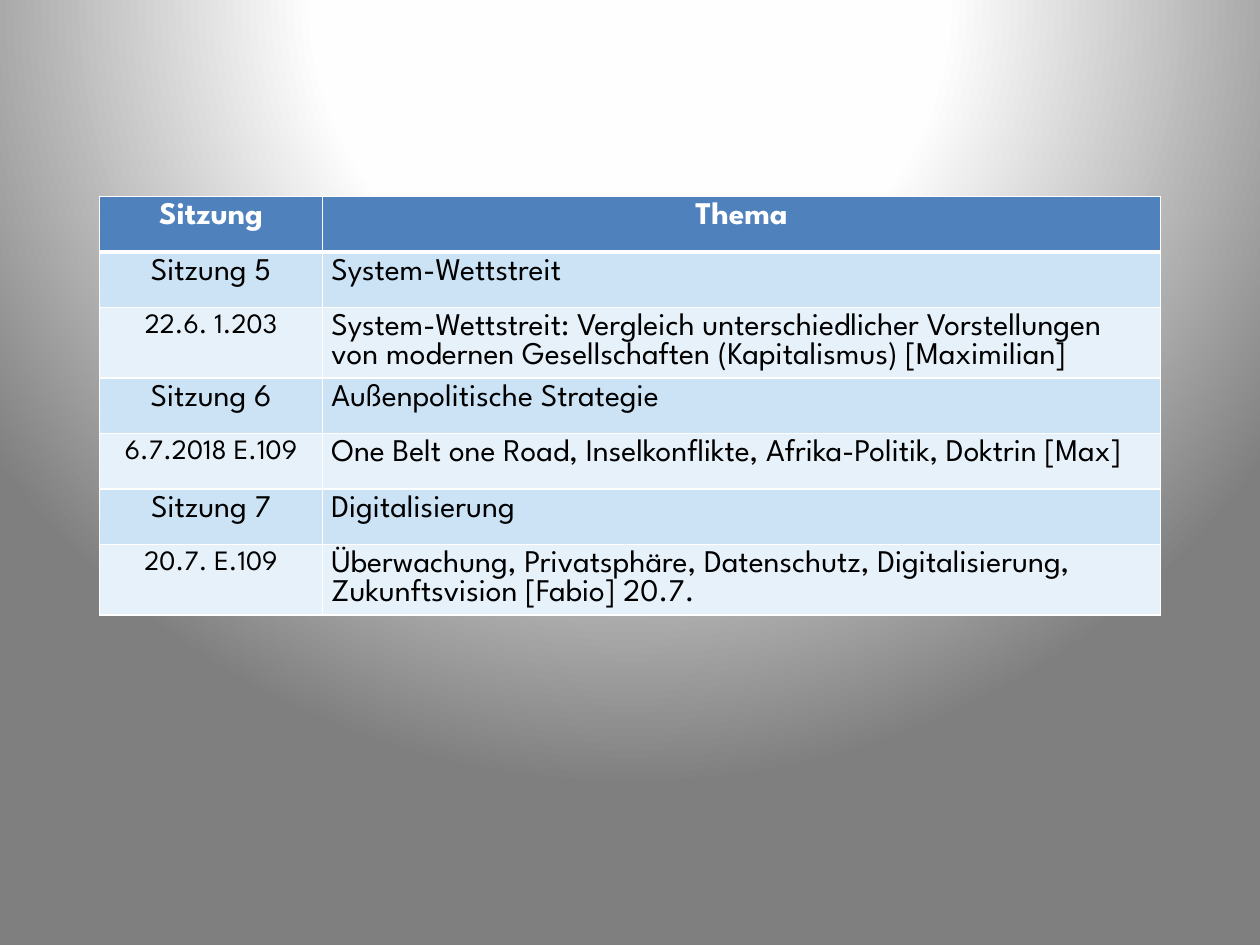
from lxml import etree
from pptx import Presentation
from pptx import util as u
from pptx.dml.color import RGBColor
from pptx.enum import text
from pptx.oxml import parse_xml
from pptx.oxml.ns import nsdecls, qn

# Content
HEADER = ("Sitzung", "Thema")
SESSIONS = [
    ("Sitzung 5", "System-Wettstreit"),
    ("22.6. 1.203", "System-Wettstreit: Vergleich unterschiedlicher Vorstellungen "
                    "von modernen Gesellschaften (Kapitalismus) [Maximilian]"),
    ("Sitzung 6", "Außenpolitische Strategie"),
    ("6.7.2018 E.109", "One Belt one Road, Inselkonflikte, Afrika-Politik, Doktrin [Max]"),
    ("Sitzung 7", "Digitalisierung"),
    ("20.7. E.109", "Überwachung, Privatsphäre, Datenschutz, Digitalisierung, "
                    "Zukunftsvision [Fabio] 20.7."),
]

# Layout and style
LEFT, TOP, ROW_HEIGHT = 0.79, 1.56, 0.44
COLUMNS = (1.77, 6.65)
FONT = "League Spartan"
WHITE, BLACK = "FFFFFF", "000000"
HEADER_FILL, SESSION_FILL, DATE_FILL = "4F81BD", "CCE3F5", "E7F1FA"
GRADIENT = [(0, "FFFFFF"), (40, "FEFEFE"), (100, "7F7F7F")]
MARGINS = {"margin_left": 0.07, "margin_right": 0.07,
           "margin_top": 0.05, "margin_bottom": 0.05}


def color(value):
    return RGBColor.from_string(value)


def set_background(slide):
    """Fill the background with a circular gradient centred above the slide."""
    slide.background.fill.solid()
    stops = "".join(f'<a:gs pos="{share * 1000}"><a:srgbClr val="{value}"/></a:gs>'
                    for share, value in GRADIENT)
    gradient = parse_xml(
        f'<a:gradFill {nsdecls("a")} rotWithShape="1"><a:gsLst>{stops}</a:gsLst>'
        '<a:path path="circle"><a:fillToRect l="50000" t="-80000" r="50000" b="180000"/>'
        '</a:path></a:gradFill>')
    solid = slide.element.xpath("p:cSld/p:bg/p:bgPr/a:solidFill")[0]
    solid.getparent().replace(solid, gradient)


def set_borders(cell, widths):
    properties = cell._tc.get_or_add_tcPr()
    for side, points in zip("LRTB", widths):
        line = etree.SubElement(properties, qn(f"a:ln{side}"), w=str(u.Pt(points)))
        fill = etree.SubElement(line, qn("a:solidFill"))
        etree.SubElement(fill, qn("a:srgbClr"), val=WHITE)


def format_cell(cell, words, fill, centered, font):
    # Borders come before the fill in the cell properties
    set_borders(cell, (1, 1, 3 if cell_is_below_header(words) else 1,
                       3 if words in HEADER else 1))
    cell.fill.solid()
    cell.fill.fore_color.rgb = color(fill)
    for name, inches in MARGINS.items():
        setattr(cell, name, u.Inches(inches))
    cell.text = words
    paragraph = cell.text_frame.paragraphs[0]
    paragraph.alignment = text.PP_ALIGN.CENTER if centered else text.PP_ALIGN.LEFT
    run_font = paragraph.runs[0].font
    run_font.color.rgb = color(WHITE if words in HEADER else BLACK)
    for name, value in font.items():
        setattr(run_font, name, value)


def cell_is_below_header(words):
    return words in SESSIONS[0]


def add_schedule(slide):
    rows = [HEADER] + SESSIONS
    frame = slide.shapes.add_table(
        len(rows), len(COLUMNS), u.Inches(LEFT), u.Inches(TOP),
        u.Inches(sum(COLUMNS)), u.Inches(ROW_HEIGHT * len(rows)))
    table = frame.table
    for column, width in zip(table.columns, COLUMNS):
        column.width = u.Inches(width)
    for i, row in enumerate(rows):
        is_header = i == 0
        is_date = not is_header and i % 2 == 0
        fill = HEADER_FILL if is_header else DATE_FILL if is_date else SESSION_FILL
        for j, words in enumerate(row):
            font = {"name": FONT, "bold": is_header,
                    "size": u.Pt(16 if is_date and j == 0 else 18)}
            format_cell(table.cell(i, j), words, fill, is_header or j == 0, font)


def main():
    presentation = Presentation()
    presentation.slide_width, presentation.slide_height = u.Inches(10), u.Inches(7.5)
    slide = presentation.slides.add_slide(presentation.slide_layouts[6])
    set_background(slide)
    add_schedule(slide)
    presentation.save("out.pptx")


if __name__ == "__main__":
    main()
